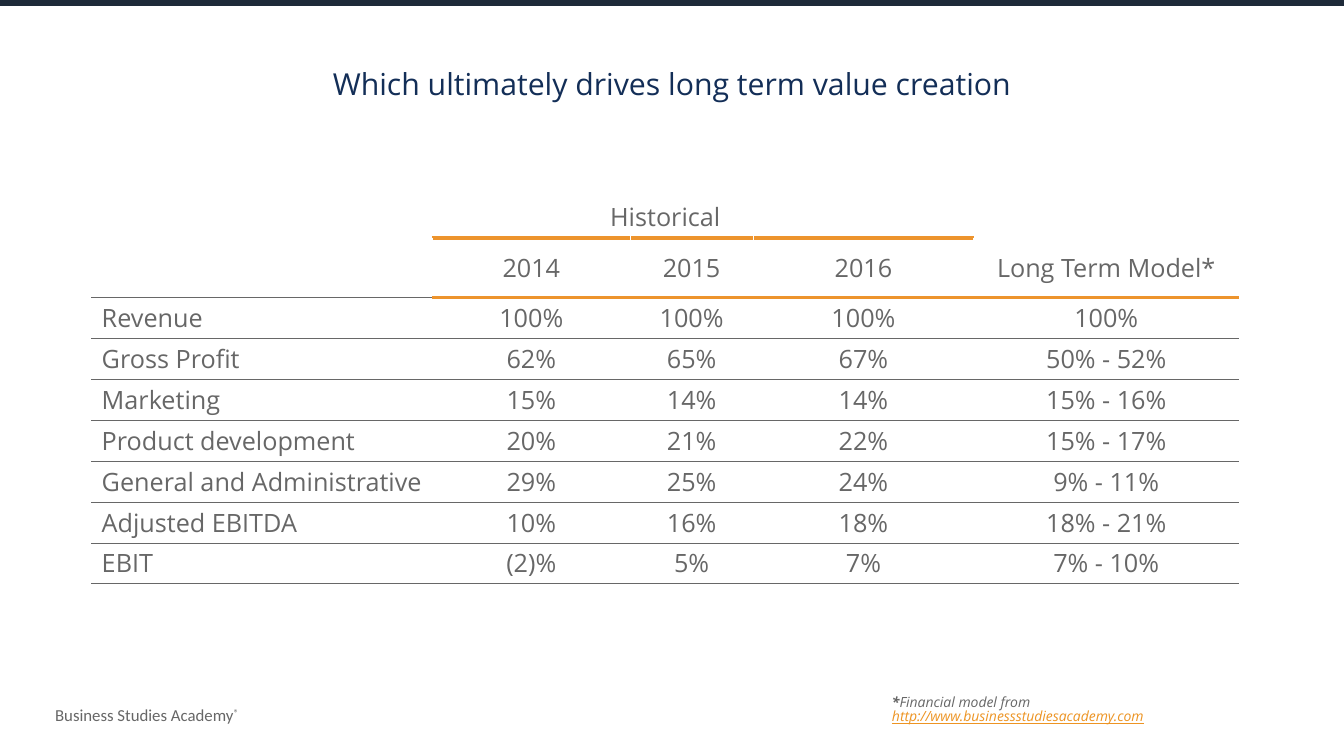
from lxml.etree import SubElement
from pptx import Presentation
from pptx.dml.color import RGBColor
from pptx.enum.shapes import MSO_SHAPE
from pptx.enum.text import MSO_ANCHOR, PP_ALIGN
from pptx.oxml.ns import qn
from pptx.util import Cm, Pt

NAVY = RGBColor(0x1E, 0x2A, 0x39)
BLUE = RGBColor(0x13, 0x2E, 0x57)
GREY = RGBColor(0x67, 0x67, 0x67)
GOLD = RGBColor(0xED, 0x94, 0x2D)
LINK = RGBColor(0xED, 0x94, 0x23)
WHITE = RGBColor(0xFF, 0xFF, 0xFF)

BODY = {"name": "Open Sans", "size": Pt(18)}
HEAD = {"name": "Open Sans", "size": Pt(21.6)}
FOOT = {"name": "Calibri", "size": Pt(12)}
NOTE = {"name": "Open Sans", "size": Pt(10), "italic": True}

WIDTHS = (8.59, 4.98, 3.1, 5.56, 6.68)
HEIGHTS = (1.07, 1.5) + (1.03,) * 7
ROWS = (
    ("Historical", "", "", "", ""),
    ("", "2014", "2015", "2016", "Long Term Model*"),
    ("Revenue", "100%", "100%", "100%", "100%"),
    ("Gross Profit", "62%", "65%", "67%", "50% - 52%"),
    ("Marketing", "15%", "14%", "14%", "15% - 16%"),
    ("Product development", "20%", "21%", "22%", "15% - 17%"),
    ("General and Administrative", "29%", "25%", "24%", "9% - 11%"),
    ("Adjusted EBITDA", "10%", "16%", "18%", "18% - 21%"),
    ("EBIT", "(2)%", "5%", "7%", "7% - 10%"),
)


def add_run(para, text, style, color):
    """Append a run with the given font values and return it."""
    run = para.add_run()
    run.text = text
    for key, value in style.items():
        setattr(run.font, key, value)
    run.font.color.rgb = color
    return run


def add_text(slide, box, wrap=True):
    """Add a text box and return its first paragraph."""
    frame = slide.shapes.add_textbox(*map(Cm, box)).text_frame
    frame.word_wrap = wrap
    return frame.paragraphs[0]


def add_bar(slide, box):
    """Draw the dark band along the top edge."""
    bar = slide.shapes.add_shape(MSO_SHAPE.RECTANGLE, *map(Cm, box))
    bar.shadow.inherit = False
    bar.fill.solid()
    bar.fill.fore_color.rgb = NAVY
    bar.line.color.rgb = NAVY
    bar.line.width = Pt(1)


def add_title(slide, box):
    """Write the centred heading."""
    para = add_text(slide, box)
    para.alignment = PP_ALIGN.CENTER
    para.line_spacing = 0.7
    add_run(para, "Which ultimately drives long term value creation", HEAD, BLUE)


def add_footer(slide, box):
    """Write the owner's name with a raised mark."""
    para = add_text(slide, box, False)
    add_run(para, "Business Studies Academy", FOOT, GREY)
    mark = add_run(para, "®", FOOT, GREY)
    mark.font._element.set("baseline", "30000")


def add_note(slide, box):
    """Write the two-line source note."""
    para = add_text(slide, box, False)
    para.line_spacing = 0.84
    add_run(para, "*", {**NOTE, "bold": True}, GREY)
    add_run(para, "Financial model from ", NOTE, GREY)
    para.add_line_break()
    link = "http://www.businessstudiesacademy.com"
    add_run(para, link, {**NOTE, "underline": True}, LINK)


def set_edge(cell, side, color, width):
    """Draw one cell border: side is T or B."""
    props = cell._tc.get_or_add_tcPr()
    line = SubElement(props, qn(f"a:ln{side}"), w=str(Pt(width)))
    fill = SubElement(line, qn("a:solidFill"))
    SubElement(fill, qn("a:srgbClr"), val=str(color))


def get_rule(row, col):
    """Return colour and width of the rule above a given row."""
    if row == 0 or (row == 1 and col in (0, 4)):
        return WHITE, 1
    if row <= 2 and col > 0:
        return GOLD, 3
    return GREY, 0.5


def fill_cell(cell, row, col, text):
    """Format one table cell, its text and its borders."""
    style = {
        "margin_top": Cm(0.08),
        "margin_bottom": Cm(0.08),
        "vertical_anchor": MSO_ANCHOR.MIDDLE if row < 2 else MSO_ANCHOR.TOP,
    }
    for key, value in style.items():
        setattr(cell, key, value)
    para = cell.text_frame.paragraphs[0]
    para.alignment = PP_ALIGN.CENTER if row < 2 or col else PP_ALIGN.LEFT
    if text:
        add_run(para, text, BODY, GREY)
    else:
        para.font.size = BODY["size"]
    set_edge(cell, "T", *get_rule(row, col))
    if row:
        set_edge(cell, "B", *get_rule(row + 1, col))
    cell.fill.background()


def add_model(slide, left, top):
    """Build the table of margins by year."""
    box = map(Cm, (left, top, sum(WIDTHS), sum(HEIGHTS)))
    table = slide.shapes.add_table(len(ROWS), len(WIDTHS), *box).table
    table.first_row = table.horz_banding = False
    for col, width in zip(table.columns, WIDTHS):
        col.width = Cm(width)
    for row, height in zip(table.rows, HEIGHTS):
        row.height = Cm(height)
    table.cell(0, 0).merge(table.cell(0, len(WIDTHS) - 1))
    for row, texts in enumerate(ROWS):
        for col, text in enumerate(texts):
            fill_cell(table.cell(row, col), row, col, text)


def main():
    """Build and save the slide."""
    deck = Presentation()
    deck.slide_width, deck.slide_height = Cm(33.87), Cm(19.05)
    slide = deck.slides.add_slide(deck.slide_layouts[6])
    add_bar(slide, (0, 0, 33.87, 0.13))
    add_footer(slide, (1.14, 17.63, 5.56, 0.76))
    add_title(slide, (4.24, 1.78, 25.4, 0.94))
    add_model(slide, 2.31, 4.93)
    add_note(slide, (22.23, 17.42, 10.26, 0.69))
    deck.save("out.pptx")


if __name__ == "__main__":
    main()
